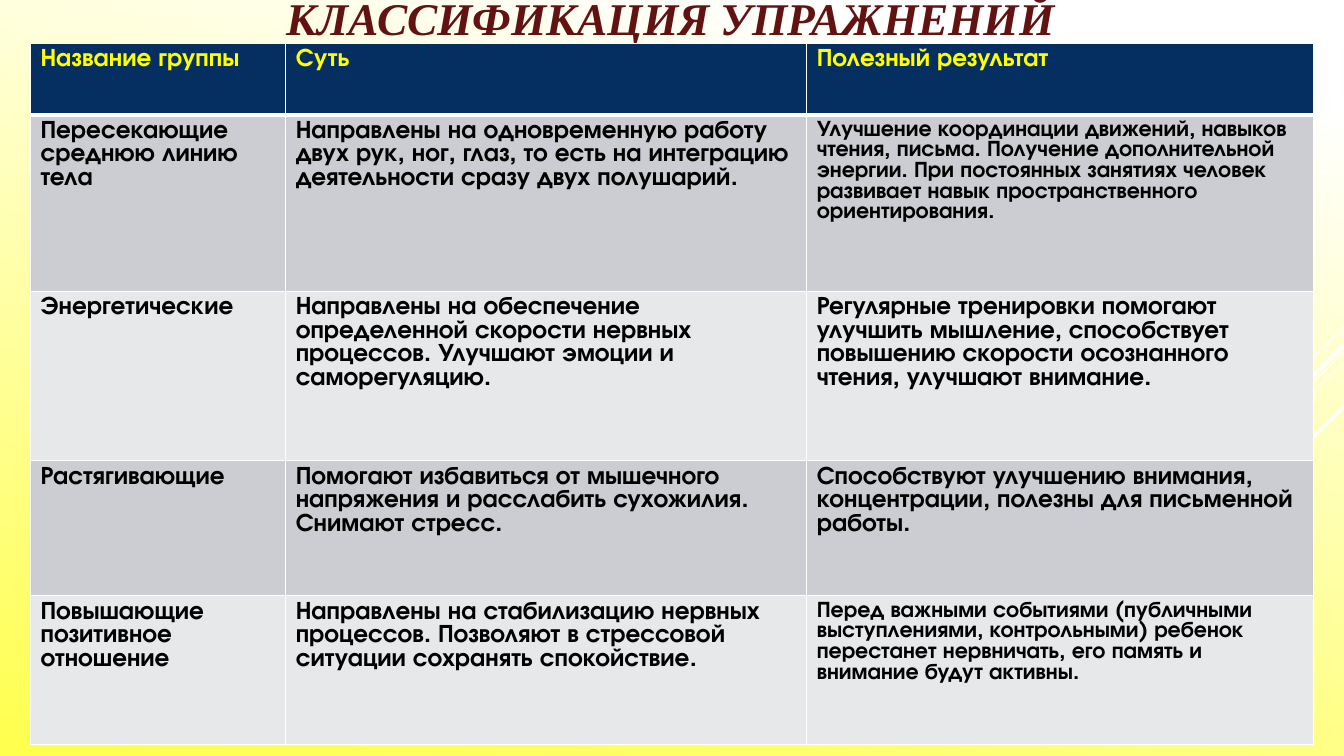
from dataclasses import dataclass

from lxml import etree
from pptx import Presentation
from pptx.dml.color import RGBColor
from pptx.enum import shapes, text
from pptx.oxml import ns
from pptx.util import Cm, Pt


@dataclass(frozen=True)
class Theme:
    title_font: str = "Times New Roman"
    table_font: str = "TeX Gyre Adventor"
    title_size: float = 32.4
    cell_size: float = 18
    small_size: float = 16
    title: str = "631212"
    header_text: str = "FFFF00"
    header_fill: str = "052F61"
    cell_text: str = "000000"
    bands: tuple = ("CCCDD2", "E7E8EA")
    white: str = "FFFFFF"
    # (position, colour)
    background: tuple = ((0.1, "FFFFFF"), (1, "FFFF4D"))


THEME = Theme()
SLIDE_W, SLIDE_H = 33.87, 19.05
TABLE_LEFT, TABLE_TOP = 0.77, 1.09

# Diagonals from the right edge: start height, horizontal run (cm), width (pt)
RAYS = [
    (8.23, 2.54, 0.75),
    (8.86, 8.28, 0.75),
    (9.12, 5.26, 0.75),
    (8.69, 4.85, 2.25),
    (10.24, 3.53, 2.25),
]

COLUMN_WIDTHS = [6.43, 13.13, 12.78]
ROW_HEIGHTS = [1.8, 4.45, 4.27, 3.4, 3.76]
SMALL_CELLS = {(1, 2), (4, 2)}
EXERCISES = [
    ("Название группы", "Суть", "Полезный результат"),
    (
        "Пересекающие среднюю линию тела",
        "Направлены на одновременную работу двух рук, ног, глаз, то есть на "
        "интеграцию деятельности сразу двух полушарий.",
        "Улучшение координации движений, навыков чтения, письма. Получение "
        "дополнительной энергии. При постоянных занятиях человек развивает "
        "навык пространственного ориентирования.",
    ),
    (
        "Энергетические",
        "Направлены на обеспечение определенной скорости нервных процессов. "
        "Улучшают эмоции и саморегуляцию.",
        "Регулярные тренировки помогают улучшить мышление, способствует "
        "повышению скорости осознанного чтения, улучшают внимание.",
    ),
    (
        "Растягивающие",
        "Помогают избавиться от мышечного напряжения и расслабить сухожилия. "
        "Снимают стресс.",
        "Способствуют улучшению внимания, концентрации, полезны для "
        "письменной работы.",
    ),
    (
        "Повышающие позитивное отношение",
        "Направлены на стабилизацию нервных процессов. Позволяют в стрессовой "
        "ситуации сохранять спокойствие.",
        "Перед важными событиями (публичными выступлениями, контрольными) "
        "ребенок перестанет нервничать, его память и внимание будут активны.",
    ),
]


def rgb(value):
    return RGBColor.from_string(value)


def set_font(p, name, size, color, italic=False):
    p.font.name = name
    p.font.size = Pt(size)
    p.font.color.rgb = rgb(color)
    p.font.bold = True
    p.font.italic = italic


def paint_background(s):
    fill = s.background.fill
    fill.gradient()
    fill.gradient_angle = 258
    for stop, (position, color) in zip(fill.gradient_stops, THEME.background):
        stop.position = position
        stop.color.rgb = rgb(color)


def add_ray(s, y, run, width):
    """Draw a 45° line from the right edge down to the left."""
    line = s.shapes.add_connector(
        shapes.MSO_CONNECTOR.STRAIGHT,
        Cm(SLIDE_W), Cm(y), Cm(SLIDE_W - run), Cm(y + run),
    )
    line.line.color.rgb = rgb(THEME.white)
    line.line.width = Pt(width)
    etree.SubElement(line._element.spPr, ns.qn("a:effectLst"))


def add_title(s, title):
    """Fit the title into the strip above the table."""
    sp = s.shapes.add_textbox(Cm(1.9), Cm(0), Cm(30), Cm(TABLE_TOP))
    tf = sp.text_frame
    tf.word_wrap = True
    tf.margin_top = tf.margin_bottom = 0
    p = tf.paragraphs[0]
    p.text = title
    p.alignment = text.PP_ALIGN.CENTER
    p.line_spacing = 0.82
    set_font(p, THEME.title_font, THEME.title_size, THEME.title, italic=True)


def fill_cell(cell, value, size, color, fill):
    cell.fill.solid()
    cell.fill.fore_color.rgb = rgb(fill)
    p = cell.text_frame.paragraphs[0]
    p.text = value
    set_font(p, THEME.table_font, size, color)


def set_border(cell, side, width):
    """Give one side of a cell, such as lnB, a white border."""
    border = etree.Element(ns.qn(f"a:{side}"), w=str(Pt(width)))
    fill = etree.SubElement(border, ns.qn("a:solidFill"))
    etree.SubElement(fill, ns.qn("a:srgbClr"), val=THEME.white)
    cell._tc.get_or_add_tcPr().insert(0, border)


def add_exercise_table(s):
    table = s.shapes.add_table(
        len(ROW_HEIGHTS), len(COLUMN_WIDTHS), Cm(TABLE_LEFT), Cm(TABLE_TOP),
        Cm(sum(COLUMN_WIDTHS)), Cm(sum(ROW_HEIGHTS)),
    ).table
    for column, width in zip(table.columns, COLUMN_WIDTHS):
        column.width = Cm(width)
    for row, height in zip(table.rows, ROW_HEIGHTS):
        row.height = Cm(height)
    for i, values in enumerate(EXERCISES):
        if i == 0:
            color, fill = THEME.header_text, THEME.header_fill
        else:
            color, fill = THEME.cell_text, THEME.bands[(i - 1) % 2]
        for j, value in enumerate(values):
            size = THEME.small_size if (i, j) in SMALL_CELLS else THEME.cell_size
            fill_cell(table.cell(i, j), value, size, color, fill)
    for cell in table.rows[0].cells:
        set_border(cell, "lnB", 3)


def main():
    prs = Presentation()
    prs.slide_width, prs.slide_height = Cm(SLIDE_W), Cm(SLIDE_H)
    s = prs.slides.add_slide(prs.slide_layouts[6])
    paint_background(s)
    for ray in RAYS:
        add_ray(s, *ray)
    add_title(s, "КЛАССИФИКАЦИЯ УПРАЖНЕНИЙ")
    add_exercise_table(s)
    prs.save("out.pptx")


if __name__ == "__main__":
    main()
